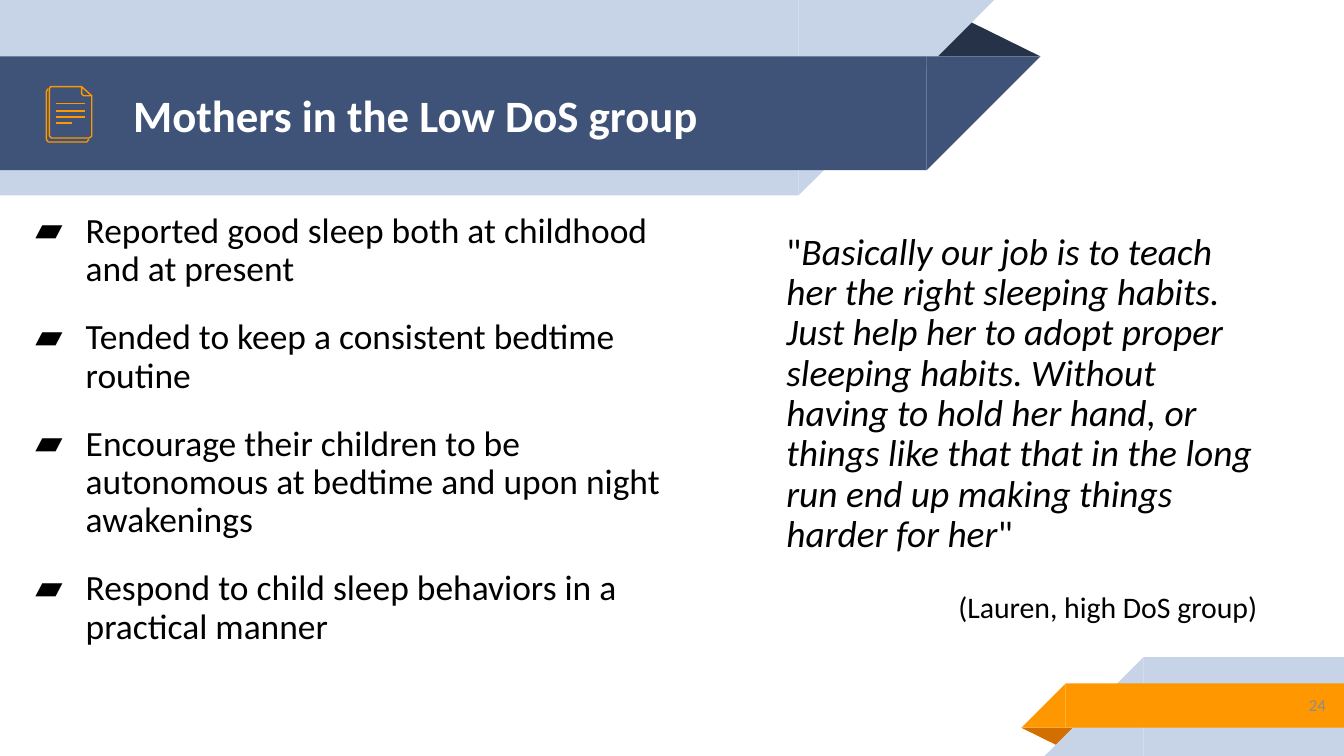
from dataclasses import dataclass

from lxml.etree import SubElement
from pptx import Presentation
from pptx.dml.color import RGBColor
from pptx.enum.shapes import MSO_CONNECTOR, MSO_SHAPE
from pptx.enum.text import MSO_ANCHOR, MSO_AUTO_SIZE, PP_ALIGN
from pptx.oxml.ns import qn
from pptx.util import Inches, Pt

COLORS = {
    "navy": "3F5378",
    "navy_fold": "263248",
    "pale": "C7D3E6",
    "orange": "FF9800",
    "orange_fold": "D26F00",
    "black": "000000",
    "white": "FFFFFF",
    "gray": "8C8C8C",
}
FONT = "Calibri"
INSET = Inches(0.13)


@dataclass(frozen=True)
class Box:
    left: float
    top: float
    width: float
    height: float


@dataclass(frozen=True)
class Piece:
    kind: MSO_SHAPE
    box: Box
    color: str
    flip: str = ""
    rotation: int = 0


@dataclass(frozen=True)
class Outline:
    points: tuple[tuple[float, float], ...]
    closed: bool = False


def header_band(width: float, top: float, height: float, color: str) -> list[Piece]:
    return [
        Piece(MSO_SHAPE.RECTANGLE, Box(0, top, width, height), color),
        Piece(MSO_SHAPE.RIGHT_TRIANGLE, Box(width, top, height, height), color, "flipV"),
    ]


def footer_band(left: float, top: float, height: float, color: str) -> list[Piece]:
    return [
        Piece(MSO_SHAPE.RECTANGLE, Box(left, top, 13.33 - left, height), color),
        Piece(MSO_SHAPE.RIGHT_TRIANGLE, Box(left - height, top, height, height), color, "flipH"),
    ]


RIBBONS = [
    Piece(MSO_SHAPE.ISOSCELES_TRIANGLE, Box(9.18, 0.18, 1.14, 0.38), "navy_fold"),
    *header_band(7.92, 0, 1.94, "pale"),
    *header_band(9.19, 0.56, 1.13, "navy"),
    Piece(MSO_SHAPE.ISOSCELES_TRIANGLE, Box(10.13, 7.22, 0.57, 0.19), "orange_fold", rotation=180),
    *footer_band(11.34, 6.52, 0.98, "pale"),
    *footer_band(10.57, 6.78, 0.44, "orange"),
]
PAGE_OUTLINES = [
    Outline(((0.88, 1.38), (0.87, 1.4), (0.86, 1.41), (0.48, 1.41), (0.47, 1.4),
             (0.46, 1.38), (0.46, 0.91), (0.47, 0.89), (0.48, 0.88))),
    Outline(((0.91, 0.95), (0.91, 1.35), (0.9, 1.36), (0.88, 1.37), (0.51, 1.37),
             (0.5, 1.36), (0.49, 1.35), (0.49, 0.88), (0.5, 0.86), (0.51, 0.86), (0.81, 0.86))),
    Outline(((0.81, 0.93), (0.81, 0.86), (0.91, 0.95), (0.83, 0.95), (0.82, 0.94)), True),
]
PAGE_LINES = [(0.84, 1.03), (0.84, 1.1), (0.84, 1.16), (0.71, 1.22)]

FINDINGS = [
    "Reported good sleep both at childhood and at present",
    "Tended to keep a consistent bedtime routine",
    "Encourage their children to be autonomous at bedtime and upon night awakenings",
    "Respond to child sleep behaviors in a practical manner",
]
QUOTE = (
    "Basically our job is to teach her the right sleeping habits. Just help her to adopt "
    "proper sleeping habits. Without having to hold her hand, or things like that that in "
    "the long run end up making things harder for her"
)


def rgb(color: str) -> RGBColor:
    return RGBColor.from_string(COLORS[color])


def draw_piece(shapes, piece: Piece) -> None:
    box = piece.box
    shape = shapes.add_shape(
        piece.kind, Inches(box.left), Inches(box.top), Inches(box.width), Inches(box.height)
    )
    shape.shadow.inherit = False
    shape.fill.solid()
    shape.fill.fore_color.rgb = rgb(piece.color)
    shape.line.fill.background()
    shape.rotation = piece.rotation
    if piece.kind == MSO_SHAPE.ISOSCELES_TRIANGLE:
        shape.adjustments[0] = 0.324
    if piece.flip:
        shape._element.spPr.find(qn("a:xfrm")).set(piece.flip, "1")


def style_icon_line(stroke) -> None:
    stroke.line.color.rgb = rgb("orange")
    stroke.line.width = Pt(0.96)


def draw_outline(shapes, outline: Outline) -> None:
    points = [(Inches(x), Inches(y)) for x, y in outline.points]
    builder = shapes.build_freeform(*points[0])
    builder.add_line_segments(points[1:], close=outline.closed)
    sheet = builder.convert_to_shape()
    sheet.shadow.inherit = False
    sheet.fill.background()
    style_icon_line(sheet)


def draw_page_line(shapes, right: float, y: float) -> None:
    page_line = shapes.add_connector(
        MSO_CONNECTOR.STRAIGHT, Inches(right), Inches(y), Inches(0.56), Inches(y)
    )
    style_icon_line(page_line)
    SubElement(page_line._element.spPr, qn("a:effectLst"))


def set_frame(shape, box: Box, anchor: MSO_ANCHOR) -> None:
    shape.left, shape.top = Inches(box.left), Inches(box.top)
    shape.width, shape.height = Inches(box.width), Inches(box.height)
    frame = shape.text_frame
    frame.margin_left = frame.margin_right = INSET
    frame.margin_top = frame.margin_bottom = INSET
    frame.word_wrap = True
    frame.auto_size = MSO_AUTO_SIZE.NONE
    frame.vertical_anchor = anchor


def set_bullet(paragraph, bullet: str = "") -> None:
    properties = paragraph._p.get_or_add_pPr()
    indent = Inches(0.5) if bullet else 0
    properties.set("marL", str(indent))
    properties.set("indent", str(-indent))
    if bullet:
        SubElement(properties, qn("a:buFont")).set("typeface", FONT)
        SubElement(properties, qn("a:buChar")).set("char", bullet)
    else:
        SubElement(properties, qn("a:buNone"))


def set_spacing(paragraphs, before: float, after: float) -> None:
    for index, paragraph in enumerate(paragraphs):
        paragraph.line_spacing = 0.9
        paragraph.space_before = Pt(before if index else 0)
        paragraph.space_after = Pt(after)


def set_font(paragraph, size: float, color: str, bold: bool = False) -> None:
    for run in paragraph.runs:
        run.font.name = FONT
        run.font.size = Pt(size)
        run.font.color.rgb = rgb(color)
        run.font.bold = bold


def main() -> None:
    deck = Presentation()
    deck.slide_width, deck.slide_height = Inches(13.33), Inches(7.5)
    slide = deck.slides.add_slide(deck.slide_layouts[3])
    shapes = slide.shapes
    title, findings, quotation = slide.placeholders

    for piece in RIBBONS:
        draw_piece(shapes, piece)
    for placeholder in (findings, quotation, title):
        shapes._spTree.append(placeholder._element)

    set_frame(title, Box(1.19, 0.6, 7.67, 1.14), MSO_ANCHOR.MIDDLE)
    title.text_frame.text = "Mothers in the Low DoS group"
    heading = title.text_frame.paragraphs[0]
    heading.alignment = PP_ALIGN.LEFT
    set_spacing([heading], 0, 0)
    set_font(heading, 32, "white", bold=True)

    set_frame(findings, Box(0.22, 1.98, 6.65, 3.97), MSO_ANCHOR.TOP)
    findings.text_frame.text = "\n".join(FINDINGS)
    for finding in findings.text_frame.paragraphs:
        set_bullet(finding, "▰")
        set_font(finding, 25.3, "black")
    set_spacing(findings.text_frame.paragraphs, 8, 13.3)

    set_frame(quotation, Box(7.67, 2.18, 4.93, 3.37), MSO_ANCHOR.TOP)
    quote = quotation.text_frame.paragraphs[0]
    for part in ('"', QUOTE, '"'):
        run = quote.add_run()
        run.text = part
        run.font.italic = part == QUOTE
    speaker = quotation.text_frame.add_paragraph()
    speaker.text = "(Lauren, high DoS group)"
    speaker.alignment = PP_ALIGN.RIGHT
    for paragraph, size in ((quote, 26.7), (speaker, 21.3)):
        set_bullet(paragraph)
        set_font(paragraph, size, "black")
    set_spacing([quote, speaker], 13.3, 13.3)

    page_number = shapes.add_textbox(0, 0, 0, 0)
    set_frame(page_number, Box(11.11, 6.76, 2.17, 0.46), MSO_ANCHOR.MIDDLE)
    page_number.text_frame.text = "24"
    page_number.text_frame.paragraphs[0].alignment = PP_ALIGN.RIGHT
    set_font(page_number.text_frame.paragraphs[0], 12, "gray")

    for outline in PAGE_OUTLINES:
        draw_outline(shapes, outline)
    for right, y in PAGE_LINES:
        draw_page_line(shapes, right, y)

    deck.save("out.pptx")


if __name__ == "__main__":
    main()
